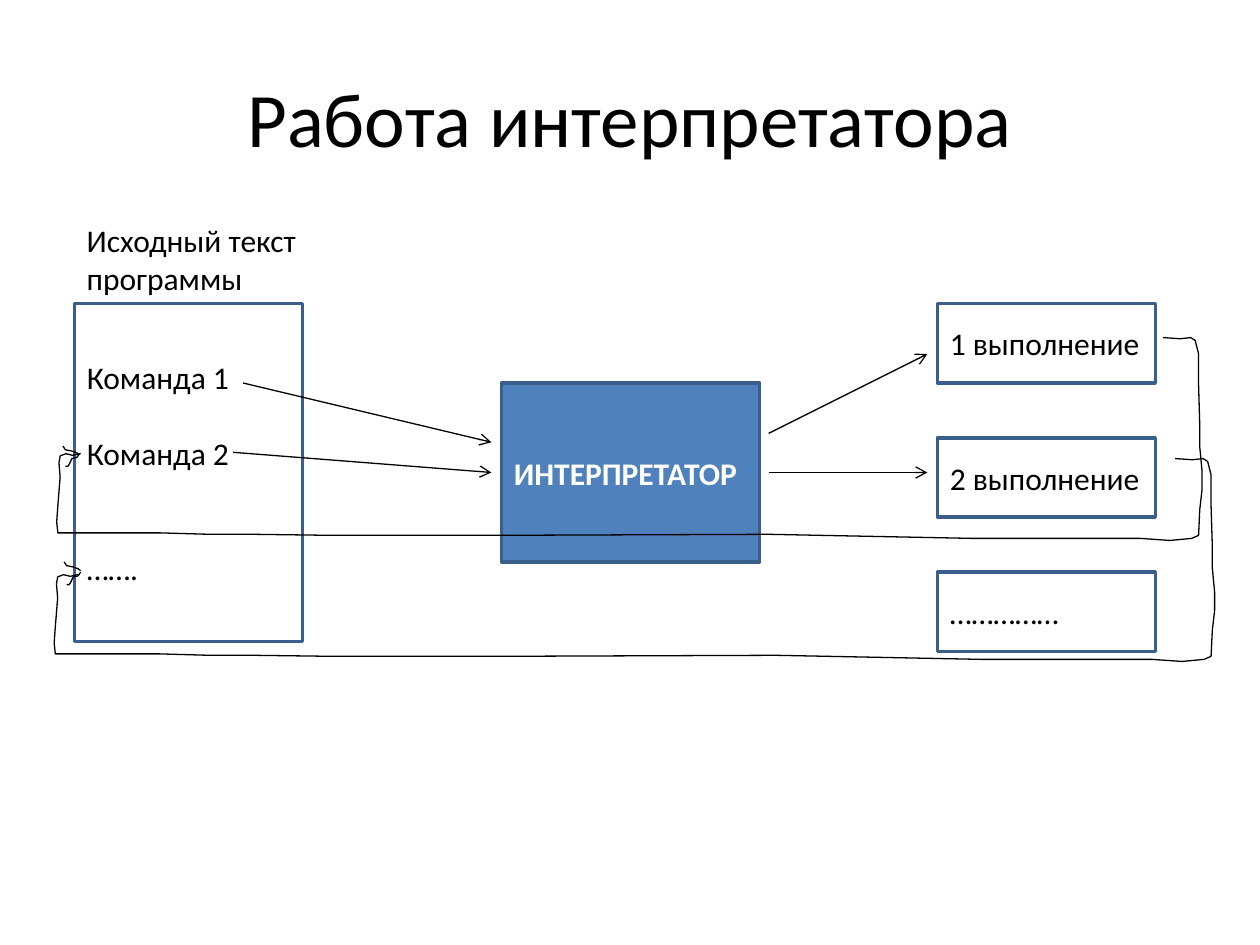
import pptx
import pptx.util
import pptx.dml.color
import pptx.enum.shapes
import pptx.enum.text
import pptx.oxml
import pptx.oxml.ns

COLORS = {"ink": "000000", "paper": "FFFFFF", "accent": "4F81BD", "edge": "3A5F8C"}
FONT = "Calibri"
BODY = 18
LINE_GAP = 22  # one text line at body size, in points
COLUMNS, ROWS = 100, 75
CELL = pptx.util.Inches(10) // COLUMNS

# Hand-drawn strokes, in percent of the box that holds each one
RETURN_LOOP = [
    (96.6, 0.6), (98.1, 1.2), (99, 0.6), (99.4, 2), (99.7, 8.6), (99.7, 24),
    (99.8, 43), (99.8, 54), (100, 66), (100, 75), (99.8, 85), (99.7, 97.5),
    (99.1, 99), (97.2, 100), (94.6, 99), (91.3, 99), (79.9, 99), (62.2, 97),
    (37.7, 97.5), (24.1, 97.5), (17.2, 97), (13.4, 97), (9, 96.3), (6.2, 96.3),
    (0.7, 96.3), (0.1, 96.3), (0, 91), (0.1, 83), (0.3, 69), (0.2, 62),
    (0.3, 58.6), (0.8, 57.5), (1.4, 58.3), (2.1, 57.4),
]
UPPER_BARB = [(0, 0), (15, 43), (54, 57), (85, 78), (100, 100)]
LOWER_BARB = [(100, 0), (85, 25), (54, 33), (42, 62), (31, 83), (15, 83)]


def cells(*counts):
    return [round(count * CELL) for count in counts]


def color(name):
    return pptx.dml.color.RGBColor.from_string(COLORS[name])


def write(shape, lines, size=BODY, ink="ink", bold=False, align="LEFT", gaps=()):
    """Fill a shape with one paragraph per line; gaps are blank lines before each."""
    frame = shape.text_frame
    frame.text = "\n".join(lines)
    frame.vertical_anchor = pptx.enum.text.MSO_ANCHOR.MIDDLE
    for para in frame.paragraphs:
        para.alignment = getattr(pptx.enum.text.PP_ALIGN, align)
        for span in para.runs:
            span.font.name = FONT
            span.font.size = pptx.util.Pt(size)
            span.font.bold = bold
            span.font.color.rgb = color(ink)
    for para, gap in zip(frame.paragraphs, gaps):
        para.space_before = pptx.util.Pt(gap * LINE_GAP)


def thin_line(shape):
    shape.line.color.rgb = color("ink")
    shape.line.width = pptx.util.Pt(0.75)


def label(page, box, lines, wrap=True, **style):
    text_box = page.shapes.add_textbox(*cells(*box))
    text_box.text_frame.word_wrap = wrap
    write(text_box, lines, **style)


def block(page, box, lines, fill=None, **style):
    shape = page.shapes.add_shape(
        pptx.enum.shapes.MSO_SHAPE.RECTANGLE, *cells(*box))
    shape.shadow.inherit = False
    if fill:
        shape.fill.solid()
        shape.fill.fore_color.rgb = color(fill)
    else:
        shape.fill.background()
    shape.line.color.rgb = color("edge")
    shape.line.width = pptx.util.Pt(2)
    write(shape, lines, **style)


def arrow(page, start, end):
    connector = page.shapes.add_connector(
        pptx.enum.shapes.MSO_CONNECTOR.STRAIGHT, *cells(*start, *end))
    thin_line(connector)
    tail = pptx.oxml.parse_xml(
        f'<a:tailEnd {pptx.oxml.ns.nsdecls("a")} type="arrow"/>')
    connector.line._get_or_add_ln().append(tail)
    effects = pptx.oxml.parse_xml(f'<a:effectLst {pptx.oxml.ns.nsdecls("a")}/>')
    connector._element.spPr.append(effects)


def stroke(page, box, shares):
    left, top, width, height = cells(*box)
    points = [(round(left + x * width / 100), round(top + y * height / 100))
              for x, y in shares]
    builder = page.shapes.build_freeform(*points[0])
    builder.add_line_segments(points[1:], close=False)
    shape = builder.convert_to_shape()
    shape.shadow.inherit = False
    shape.fill.background()
    thin_line(shape)


def return_path(page, box, barb_left, upper_top, lower_top):
    """Loop from a result back to the next command, with a two-stroke head."""
    stroke(page, box, RETURN_LOOP)
    left, top = box[:2]
    stroke(page, (left + barb_left, top + upper_top, 1.3, 0.7), UPPER_BARB)
    stroke(page, (left + barb_left, top + lower_top, 1.3, 1.2), LOWER_BARB)


def source_program(page, box):
    left, top, width, height = box
    heading = 7.1
    label(page, (left, top, width + 1.3, heading),
          ["Исходный текст", "программы"], wrap=False)
    block(page, (left, top + heading, width, height - heading),
          ["Команда 1", "Команда 2", "……."], gaps=(0, 1, 2))


def results(page, box):
    left, top, width, height = box
    block_height = 6.3
    step = (height - block_height) / 2
    for row, text in enumerate(["1 выполнение", "2 выполнение", "……………"]):
        block(page, (left, top + row * step, width, block_height), [text])


def flow_arrows(page):
    into, out, result = 39, 61, 73.6
    arrow(page, (19.3, 30.4), (into, 35.1))
    arrow(page, (18.5, 35.9), (into, 37.5))
    arrow(page, (out, 34.4), (result, 28.1))
    arrow(page, (out, 37.5), (result, 37.5))


def interpreter_slide(page):
    label(page, (5, 3, COLUMNS - 10, 12.5), ["Работа интерпретатора"],
          size=44, align="CENTER")
    block(page, (39.8, 30.4, 20.5, 14.2), ["ИНТЕРПРЕТАТОР"],
          fill="accent", ink="paper", bold=True)
    source_program(page, (5.9, 17, 18.1, 33.9))
    results(page, (74.4, 24.1, 17.3, 27.6))
    flow_arrows(page)
    return_path(page, (4.5, 26.7, 90.9, 16.2), 0.5, 8.7, 9.3)
    return_path(page, (4.3, 36.3, 92.1, 16.2), 0.8, 8.3, 9.1)


def main():
    deck = pptx.Presentation()
    deck.slide_width, deck.slide_height = cells(COLUMNS, ROWS)
    interpreter_slide(deck.slides.add_slide(deck.slide_layouts[6]))
    deck.save("out.pptx")


if __name__ == "__main__":
    main()
